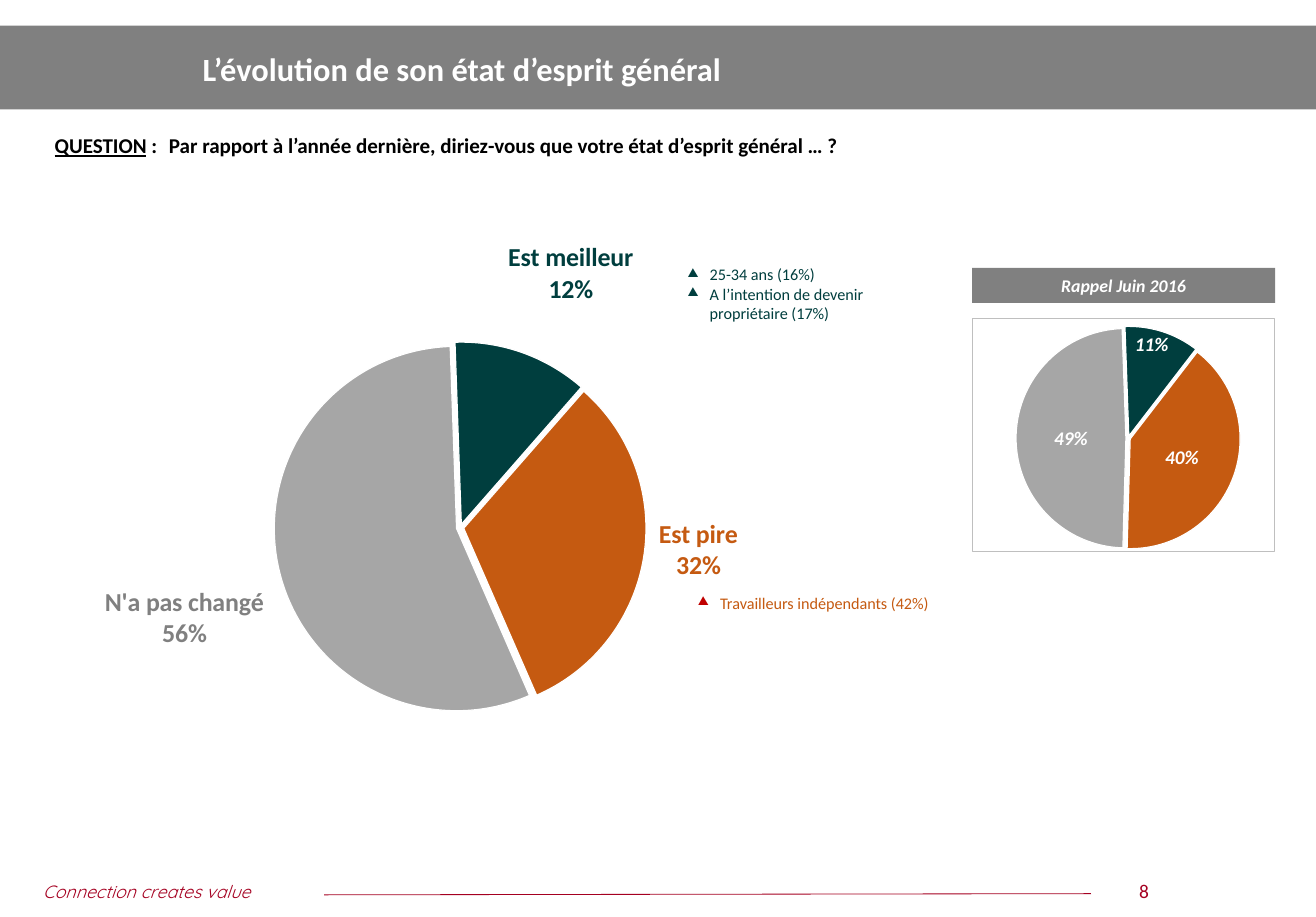
from pptx import Presentation
from pptx.chart.data import CategoryChartData
from pptx.dml.color import RGBColor
from pptx.enum.chart import XL_CHART_TYPE, XL_LABEL_POSITION
from pptx.enum.shapes import MSO_CONNECTOR, MSO_SHAPE
from pptx.enum.text import MSO_ANCHOR, PP_ALIGN
from pptx.oxml import parse_xml
from pptx.oxml.ns import nsdecls, qn
from pptx.util import Inches, Pt

INK = {"white": "FFFFFF", "black": "000000", "band": "808080", "wine": "A50021",
       "better": "003E3E", "worse": "C55A11", "same": "A6A6A6",
       "edge": "BFBFBF", "red": "C00000"}
SLICES = ["better", "worse", "same"]

TITLE = "L’évolution de son état d’esprit général"
QUESTION = [("QUESTION", {"underline": True}),
            (" :\tPar rapport à l’année dernière, diriez-vous que votre "
             "état d’esprit général … ?", {})]
NOTES = [
    {"box": (5.8, 2.22, 2.25, 0.61), "ink": "better", "mark": "better",
     "lines": ["25-34 ans (16%)", "A l’intention de devenir propriétaire (17%)"]},
    {"box": (5.89, 5.04, 2.97, 0.27), "ink": "worse", "mark": "red",
     "lines": ["Travailleurs indépendants (42%)"]},
]
# "shift" moves a label by a share of the chart's width and height
PIES = [
    {"box": (0.63, 2.08, 7.12, 4.69), "plot": (0.242, 0.182, 0.448, 0.681),
     "cats": ["Est meilleur", "Est pire", "N'a pas changé"],
     "vals": [0.12, 0.32, 0.56], "names": True, "border": None,
     "pos": XL_LABEL_POSITION.OUTSIDE_END, "inks": ["better", "worse", "band"],
     "font": {"size": Pt(16), "bold": True, "name": "Calibri"},
     "shift": {0: (-0.02, -0.09), 1: (0.01, -0.07), 2: (-0.01, 0.03)}},
    {"box": (8.34, 2.73, 2.6, 2.01), "plot": (0.121, 0.033, 0.788, 0.961),
     "cats": ["1", "2", "3"],
     "vals": [0.11, 0.4, 0.49], "names": False, "border": "edge",
     "pos": XL_LABEL_POSITION.CENTER, "inks": ["white"] * 3,
     "font": {"size": Pt(12), "bold": True, "italic": True, "name": "Calibri"},
     "shift": {0: (0.02, -0.17)}},
]


def color(name):
    return RGBColor.from_string(INK[name])


def style(font, ink, form):
    for key, val in form.items():
        setattr(font, key, val)
    font.color.rgb = color(ink)


def write(para, text, ink, size, name="Calibri", **form):
    run = para.add_run()
    run.text = text
    style(run.font, ink, {"size": Pt(size), "name": name, **form})


def area(box):
    return [Inches(v) for v in box]


def frame(box):
    text = slide.shapes.add_textbox(*area(box)).text_frame
    text.word_wrap = True
    return text


def hang(para, size):
    """Give a paragraph a hanging indent and return its properties."""
    props = para._p.get_or_add_pPr()
    props.set("marL", str(Inches(size)))
    props.set("indent", str(-Inches(size)))
    return props


def band(box):
    shape = slide.shapes.add_shape(MSO_SHAPE.RECTANGLE, *area(box))
    shape.shadow.inherit = False
    shape.fill.solid()
    shape.fill.fore_color.rgb = color("band")
    shape.line.fill.background()
    return shape.text_frame


def node(tag, body="", **attrs):
    pairs = "".join(f' {k}="{v}"' for k, v in attrs.items())
    return parse_xml(f"<{tag} {nsdecls('c', 'a')}{pairs}>{body}</{tag}>")


def layout(**vals):
    body = "".join(f'<c:{k} val="{v}"/>' for k, v in vals.items())
    return node("c:layout", f"<c:manualLayout>{body}</c:manualLayout>")


def label(tag, pie, num):
    """Show the value on the first slice, the share on others, with any name."""
    tag.find(qn("c:showVal")).set("val", str(int(num == 0)))
    tag.find(qn("c:showPercent")).set("val", str(int(num > 0)))
    if pie["names"]:
        tag.find(qn("c:showCatName")).set("val", "1")
        tag.append(node("c:separator", "\n"))
    if num in pie["shift"]:
        x, y = pie["shift"][num]
        tag.find(qn("c:idx")).addnext(layout(x=x, y=y))


def draw(pie):
    data = CategoryChartData(number_format="0%")
    data.categories = pie["cats"]
    data.add_series("Series 1", pie["vals"])
    chart = slide.shapes.add_chart(XL_CHART_TYPE.PIE, *area(pie["box"]), data).chart
    chart.has_legend = chart.has_title = False
    style(chart.font, "black", {"size": Pt(18), "name": "Calibri"})
    plot = chart.plots[0]
    plot.vary_by_categories = True
    plot._element.append(node("c:firstSliceAng", val=358))

    row = plot.series[0]
    row.format.line.color.rgb = color("white")
    row._element.find(qn("c:spPr")).addnext(node("c:explosion", val=2))
    shares = {"number_format": "0%", "number_format_is_linked": False,
              "position": pie["pos"], "show_value": False,
              "show_percentage": True, "show_category_name": pie["names"]}
    for key, val in shares.items():
        setattr(row.data_labels, key, val)
    style(row.data_labels.font, "black" if pie["names"] else "white", pie["font"])
    for num, (fill, ink) in enumerate(zip(SLICES, pie["inks"])):
        point = row.points[num]
        point.format.fill.solid()
        point.format.fill.fore_color.rgb = color(fill)
        point.format.line.color.rgb = color("white")
        point.format.line.width = Pt(0.75)
        if pie["names"] or num < 2:
            style(point.data_label.font, ink, pie["font"])
            point.data_label.position = pie["pos"]
    for num, tag in enumerate(row._element.iter(qn("c:dLbl"))):
        label(tag, pie, num)

    space = chart._chartSpace
    zone = space.find(".//" + qn("c:plotArea"))
    for old in zone.findall(qn("c:layout")):
        zone.remove(old)
    x, y, w, h = pie["plot"]
    zone.insert(0, layout(layoutTarget="inner", xMode="edge", yMode="edge",
                          x=x, y=y, w=w, h=h))
    if pie["border"]:
        edge = (f'<a:noFill/><a:ln w="{Pt(0.75)}"><a:solidFill>'
                f'<a:srgbClr val="{INK[pie["border"]]}"/></a:solidFill></a:ln>')
        space.find(qn("c:chart")).addnext(node("c:spPr", edge))


deck = Presentation()
deck.slide_width, deck.slide_height = Inches(11.29), Inches(7.87)
slide = deck.slides.add_slide(deck.slide_layouts[6])

band((0, 0.22, 11.29, 0.72))
head = frame((1.64, 0.23, 9.48, 0.72))
head.vertical_anchor = MSO_ANCHOR.MIDDLE
write(head.paragraphs[0], TITLE, "white", 20, bold=True)

ask = frame((0.38, 1.03, 10.67, 0.58))
ask.margin_left, ask.margin_top, ask.margin_right, ask.margin_bottom = area(
    (0.09, 0.18, 0.36, 0.18))
hang(ask.paragraphs[0], 0.98)
for text, form in QUESTION:
    write(ask.paragraphs[0], text, "black", 13, bold=True, **form)

for pie in PIES:
    draw(pie)

recall = band((8.34, 2.3, 2.6, 0.3))
recall.vertical_anchor = MSO_ANCHOR.MIDDLE
recall.paragraphs[0].alignment = PP_ALIGN.CENTER
write(recall.paragraphs[0], "Rappel Juin 2016", "white", 11, bold=True, italic=True)

for note in NOTES:
    text = frame(note["box"])
    for num, line in enumerate(note["lines"]):
        para = text.add_paragraph() if num else text.paragraphs[0]
        props = hang(para, 0.19)
        props.append(node("a:buClr", f'<a:srgbClr val="{INK[note["mark"]]}"/>'))
        props.append(node("a:buSzPct", val=75000))
        props.append(node("a:buChar", char="▲"))
        write(para, line, note["ink"], 10)

motto = frame((0.27, 7.51, 2.98, 0.29))
write(motto.paragraphs[0], "Connection creates value", "wine", 11, "Quicksand",
      italic=True)
rule = slide.shapes.add_connector(MSO_CONNECTOR.STRAIGHT,
                                  *area((2.78, 7.68, 9.36, 7.67)))
rule.line.color.rgb = color("wine")
rule.line.width = Pt(0.5)
rule._element.spPr.append(node("a:effectLst"))
page = frame((9.52, 7.5, 0.59, 0.3))
page.paragraphs[0].alignment = PP_ALIGN.CENTER
write(page.paragraphs[0], "8", "wine", 12)

deck.save("out.pptx")
